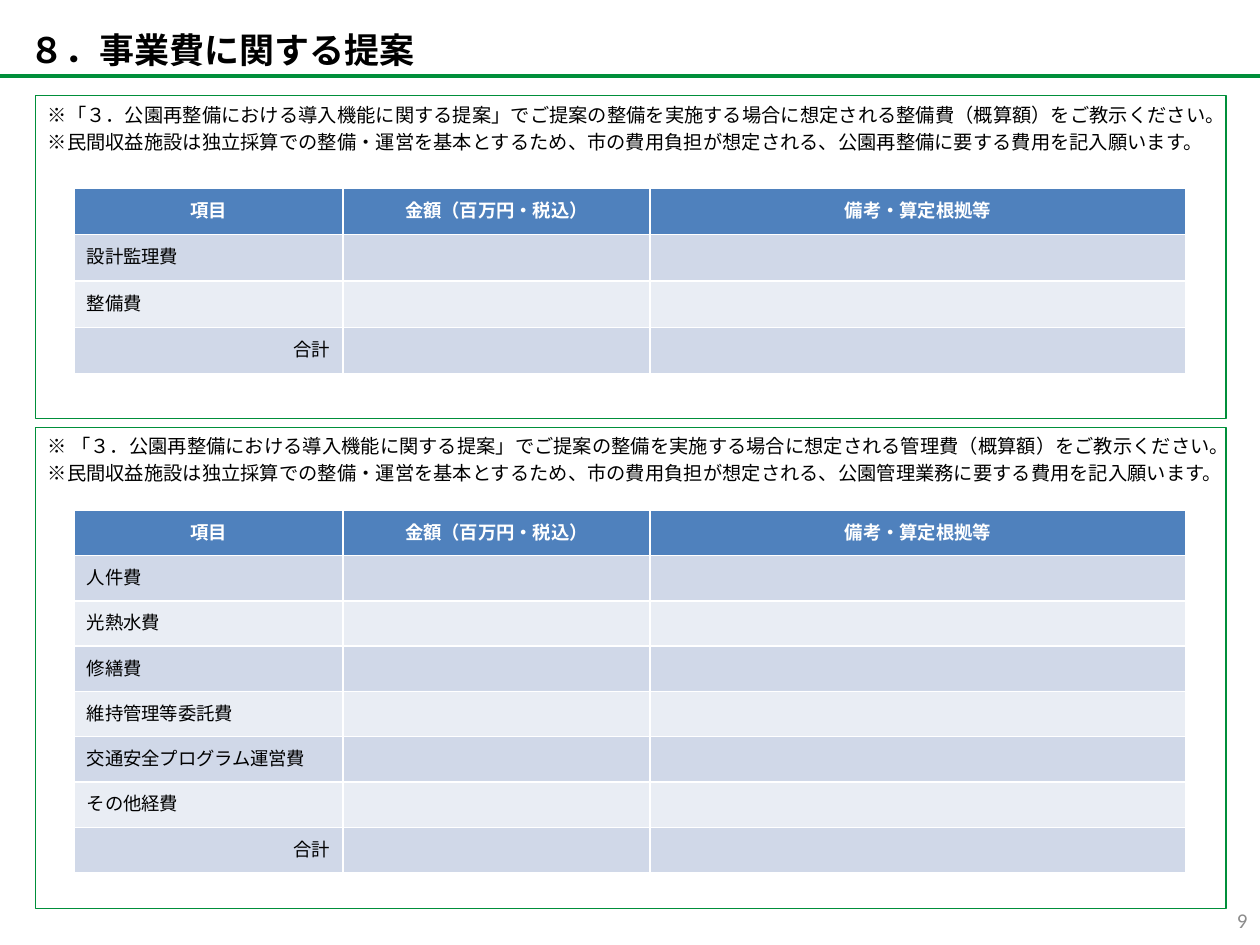
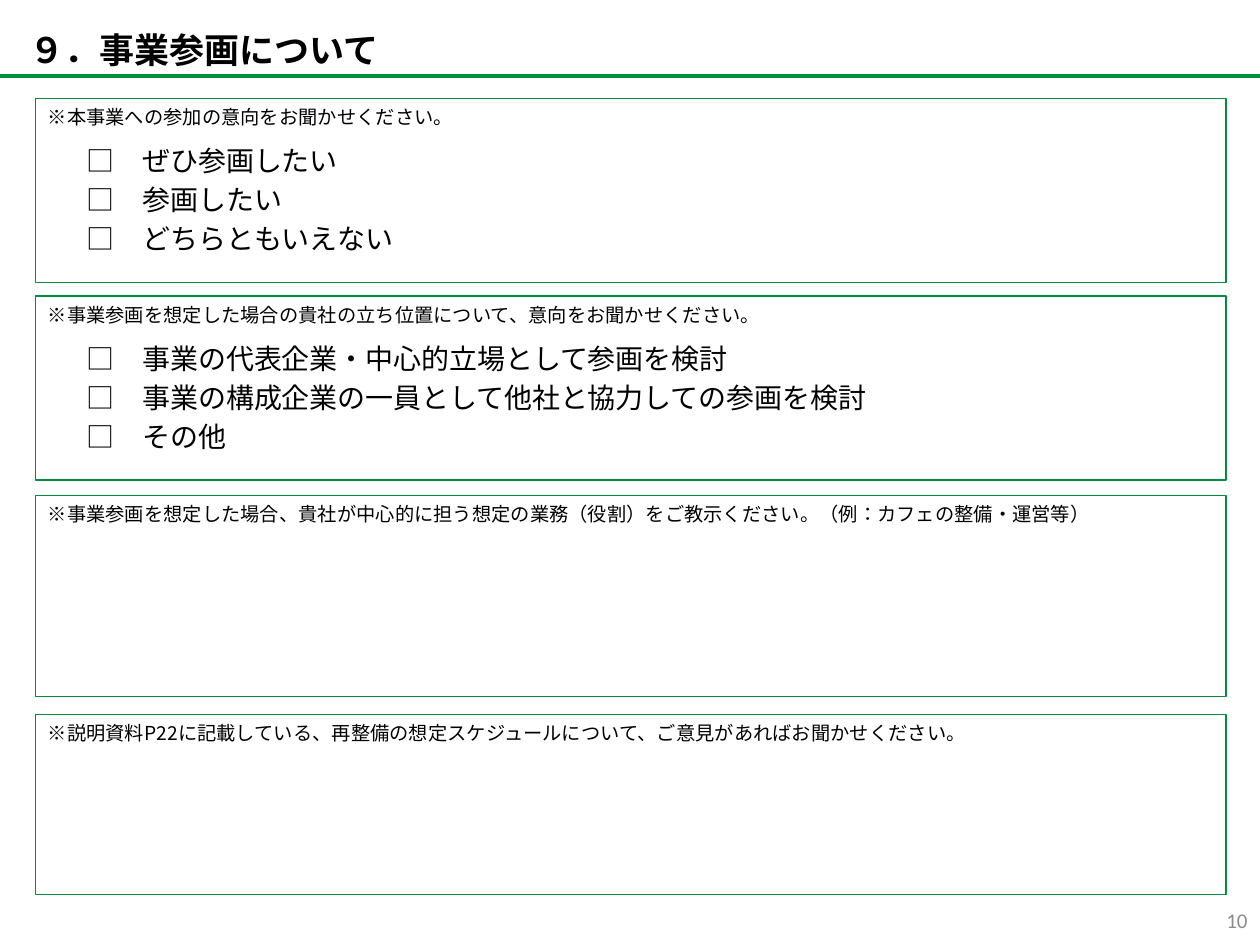
"""Build two proposal form pages: project costs and participation."""
from lxml.etree import SubElement
from pptx import Presentation
from pptx.dml.color import RGBColor
from pptx.enum.shapes import MSO_CONNECTOR as Connector, MSO_SHAPE as Shape
from pptx.enum.text import MSO_ANCHOR as Anchor, MSO_AUTO_SIZE as AutoSize, PP_ALIGN as Align
from pptx.oxml.ns import qn
from pptx.util import Pt

COLORS = {"green": "008F3A", "black": "000000", "gray": "8C8C8C", "white": "FFFFFF",
          "header": "4F81BD", "odd": "D0D8E8", "even": "E9EDF4"}
JAPANESE = "Noto Sans CJK JP"
TITLE = {"size": 20, "name": "Arial", "east": "Arial", "color": "black", "bold": True,
         "para": {"alignment": Align.LEFT, "line_spacing": 1.2}}
NUMBER = {"size": 12, "name": "Calibri", "east": "Calibri", "color": "gray", "bold": False,
          "para": {"alignment": Align.RIGHT}}
NOTE = {"size": 11, "name": JAPANESE, "east": JAPANESE, "color": "black", "bold": False,
        "para": {"alignment": Align.LEFT, "line_spacing": Pt(15.5)}}
CHOICE = NOTE | {"size": 16, "para": {"alignment": Align.LEFT, "line_spacing": Pt(22.4)}}
HEADING = {"size": 10.5, "name": "Calibri", "east": "Calibri", "color": "white", "bold": True,
           "para": {"alignment": Align.CENTER}}
ITEM = HEADING | {"color": "black", "bold": False, "para": {"alignment": Align.LEFT}}
TOTAL = ITEM | {"para": {"alignment": Align.RIGHT}}

PANEL_LEFT, PANEL_WIDTH = 20.2, 680.4
INNER_LEFT = 42.5
COLUMN_WIDTHS = [153.4, 175.7, 306]
HEADINGS = ["項目", "金額（百万円・税込）", "備考・算定根拠等"]

PAGES = [
    {"title": "８．事業費に関する提案", "number": "9", "panels": [
        {"top": 54.7, "height": 184.3, "notes": [
            "※「３．公園再整備における導入機能に関する提案」でご提案の整備を実施する場合に想定される整備費（概算額）をご教示ください。",
            "※民間収益施設は独立採算での整備・運営を基本とするため、市の費用負担が想定される、公園再整備に要する費用を記入願います。"],
         "table_top": 107.3, "row_height": 26.6, "items": ["設計監理費", "整備費", "合計"]},
        {"top": 244.1, "height": 275, "notes": [
            "※ 「３．公園再整備における導入機能に関する提案」でご提案の整備を実施する場合に想定される管理費（概算額）をご教示ください。",
            "※民間収益施設は独立採算での整備・運営を基本とするため、市の費用負担が想定される、公園管理業務に要する費用を記入願います。"],
         "table_top": 291.6, "row_height": 25.9,
         "items": ["人件費", "光熱水費", "修繕費", "維持管理等委託費", "交通安全プログラム運営費",
                   "その他経費", "合計"]}]},
    {"title": "９．事業参画について", "number": "10", "panels": [
        {"top": 56.2, "height": 105.1, "notes": ["※本事業への参加の意向をお聞かせください。"],
         "choices": ["ぜひ参画したい", "参画したい", "どちらともいえない"]},
        {"top": 169.2, "height": 105.1,
         "notes": ["※事業参画を想定した場合の貴社の立ち位置について、意向をお聞かせください。"],
         "choices": ["事業の代表企業・中心的立場として参画を検討",
                     "事業の構成企業の一員として他社と協力しての参画を検討", "その他"]},
        {"top": 283, "height": 115.2, "notes": [
            "※事業参画を想定した場合、貴社が中心的に担う想定の業務（役割）をご教示ください。（例：カフェの整備・運営等）"]},
        {"top": 408.2, "height": 103, "notes": [
            "※説明資料P22に記載している、再整備の想定スケジュールについて、ご意見があればお聞かせください。"]}]},
]


def rgb(name):
    return RGBColor.from_string(COLORS[name])


def write(frame, lines, look, **frame_format):
    for key, value in frame_format.items():
        setattr(frame, key, value)
    for index, line in enumerate(lines):
        para = frame.paragraphs[0] if index == 0 else frame.add_paragraph()
        for key, value in look["para"].items():
            setattr(para, key, value)
        span = para.add_run()
        span.text = line
        for key in ("name", "bold"):
            setattr(span.font, key, look[key])
        span.font.size = Pt(look["size"])
        span.font.color.rgb = rgb(look["color"])
        properties = span.font._element
        properties.set("lang", "ja-JP")
        SubElement(properties, qn("a:ea"), typeface=look["east"])


deck = Presentation()
deck.slide_width, deck.slide_height = Pt(720), Pt(540)

for content in PAGES:
    page = deck.slides.add_slide(deck.slide_layouts[5])
    title = page.shapes.title
    for key, value in {"left": 9.4, "top": 7.9, "width": 463, "height": 32.4}.items():
        setattr(title, key, Pt(value))
    write(title.text_frame, [content["title"]], TITLE, word_wrap=True,
          vertical_anchor=Anchor.TOP, auto_size=AutoSize.NONE)

    rule = page.shapes.add_connector(Connector.STRAIGHT, 0, Pt(43.2), Pt(720), Pt(43.2))
    rule.line.color.rgb = rgb("green")
    rule.line.width = Pt(2.25)
    SubElement(rule._element.spPr, qn("a:effectLst"))

    number = page.shapes.add_textbox(Pt(552.2), Pt(511.2), Pt(167.8), Pt(28.8))
    write(number.text_frame, [content["number"]], NUMBER, word_wrap=True,
          vertical_anchor=Anchor.MIDDLE)

    for panel in content["panels"]:
        box = page.shapes.add_shape(Shape.RECTANGLE, Pt(PANEL_LEFT), Pt(panel["top"]),
                                    Pt(PANEL_WIDTH), Pt(panel["height"]))
        box.shadow.inherit = False
        box.fill.background()
        box.line.color.rgb = rgb("green")
        box.line.width = Pt(0.75)
        write(box.text_frame, panel["notes"], NOTE, word_wrap=True, margin_top=Pt(1.8),
              margin_right=0, vertical_anchor=Anchor.TOP)

        if "choices" in panel:
            choices = page.shapes.add_textbox(Pt(INNER_LEFT), Pt(panel["top"] + 20.8),
                                              Pt(552.2), Pt(80.6))
            write(choices.text_frame, [f"□　{choice}" for choice in panel["choices"]], CHOICE,
                  word_wrap=True, margin_top=Pt(1.8))

        if "items" in panel:
            rows = [HEADINGS] + [[item, "", ""] for item in panel["items"]]
            table = page.shapes.add_table(
                len(rows), len(HEADINGS), Pt(INNER_LEFT), Pt(panel["table_top"]),
                Pt(sum(COLUMN_WIDTHS)), Pt(panel["row_height"] * len(rows))).table
            for column, width in zip(table.columns, COLUMN_WIDTHS):
                column.width = Pt(width)
            for row_index, row in enumerate(rows):
                table.rows[row_index].height = Pt(panel["row_height"])
                fill = "header" if row_index == 0 else "odd" if row_index % 2 else "even"
                for column_index, text in enumerate(row):
                    cell = table.cell(row_index, column_index)
                    cell.vertical_anchor = Anchor.MIDDLE
                    cell.fill.solid()
                    cell.fill.fore_color.rgb = rgb(fill)
                    look = HEADING if row_index == 0 else TOTAL if text == "合計" else ITEM
                    if text:
                        write(cell.text_frame, [text], look)
                    else:
                        SubElement(cell.text_frame.paragraphs[0]._p, qn("a:endParaRPr"), sz="1050")

deck.save("out.pptx")
